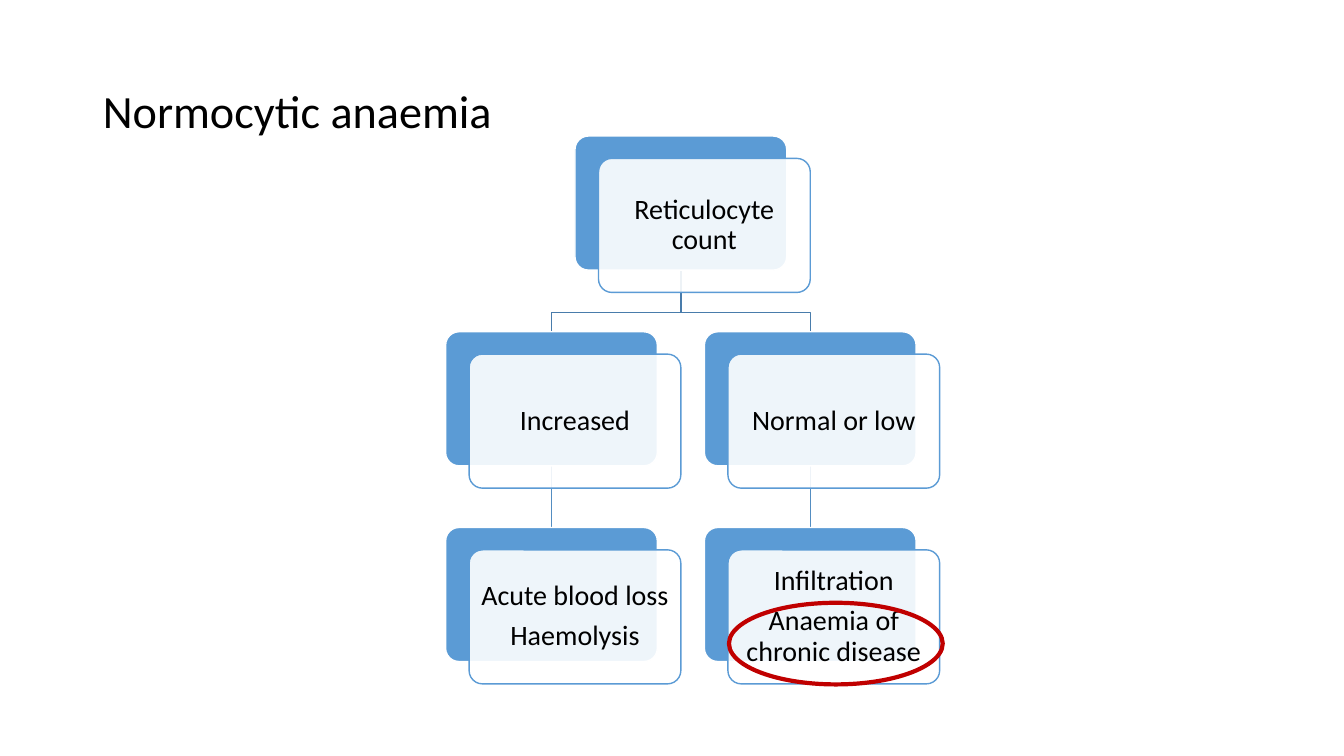
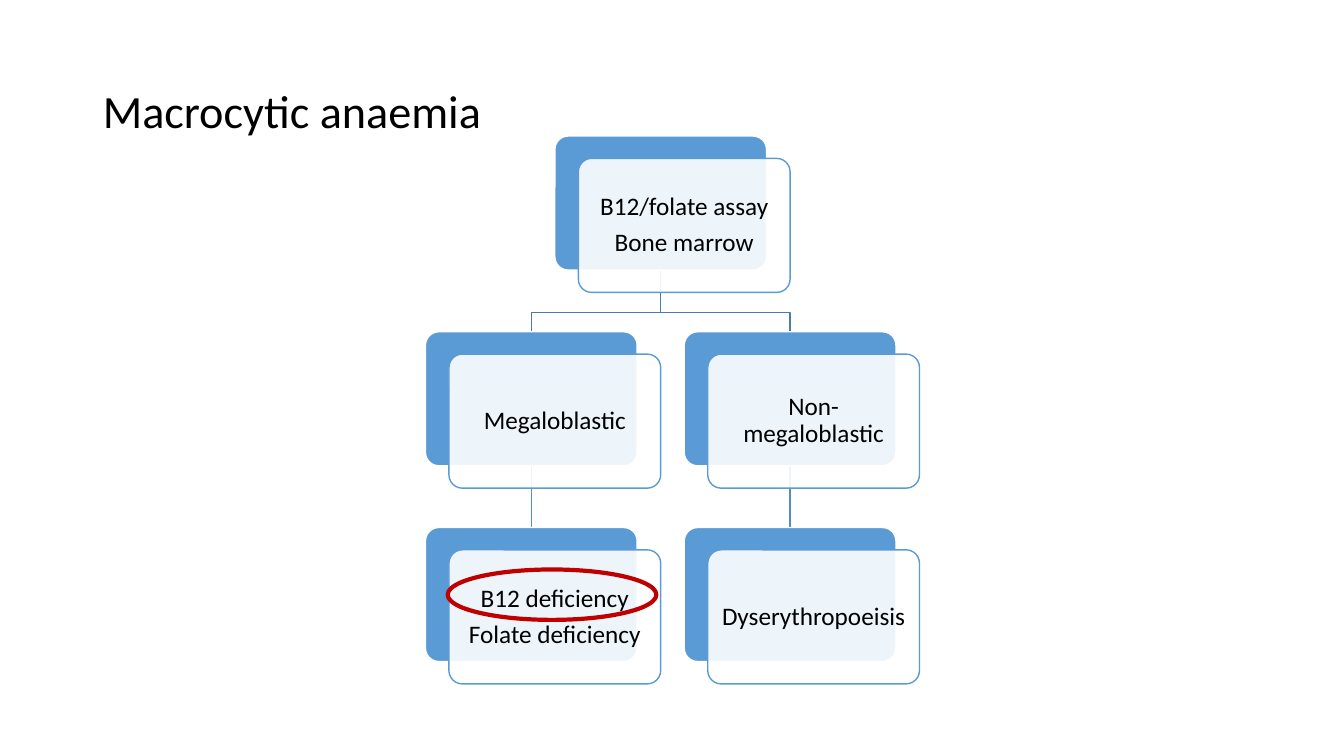
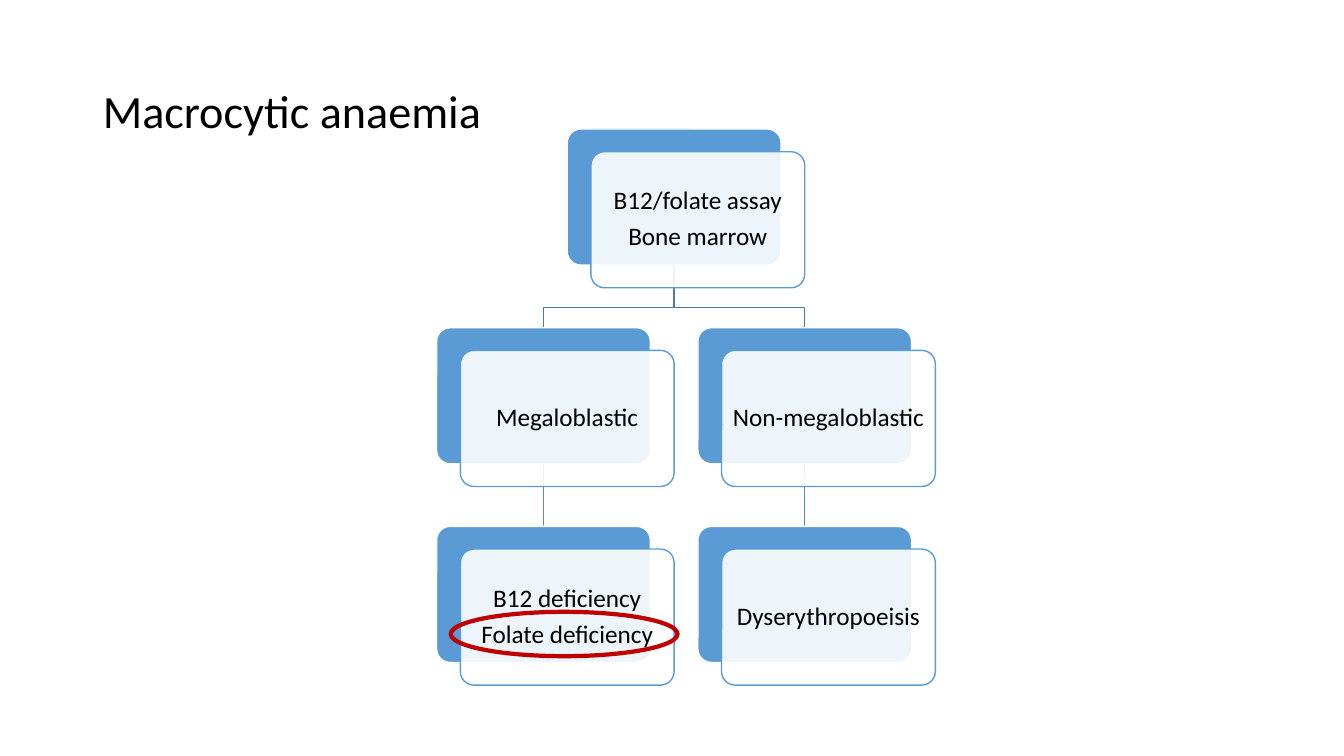
from dataclasses import dataclass

from lxml import etree
from pptx import Presentation
from pptx.dml.color import RGBColor
from pptx.enum.shapes import MSO_CONNECTOR, MSO_SHAPE
from pptx.enum.text import MSO_ANCHOR, MSO_AUTO_SIZE, PP_ALIGN
from pptx.oxml.ns import qn
from pptx.util import Inches, Pt

ROUNDED = MSO_SHAPE.ROUNDED_RECTANGLE
OVAL = MSO_SHAPE.OVAL
STRAIGHT = MSO_CONNECTOR.STRAIGHT
MIDDLE = MSO_ANCHOR.MIDDLE
LEFT, CENTER = PP_ALIGN.LEFT, PP_ALIGN.CENTER
NO_AUTOFIT = MSO_AUTO_SIZE.NONE
TITLE_ONLY = 5
TOP_SIDE, BOTTOM_SIDE = 0, 2


@dataclass(frozen=True)
class Theme:
    font: str = "Calibri"
    text: RGBColor = RGBColor(0x00, 0x00, 0x00)
    white: RGBColor = RGBColor(0xFF, 0xFF, 0xFF)
    blue: RGBColor = RGBColor(0x5B, 0x9B, 0xD5)
    branch: RGBColor = RGBColor(0x49, 0x7C, 0xAB)
    stem: RGBColor = RGBColor(0x53, 0x8D, 0xC1)
    highlight: RGBColor = RGBColor(0xC0, 0x00, 0x00)
    title_size: int = 33
    line_spacing: float = 0.9
    space_after: float = 0.35
    card_opacity: int = 90
    thin: int = 1
    thick: int = 3


@dataclass(frozen=True)
class Tree:
    """Place and proportions of a two-column chart, in inches."""
    left: float
    top: float
    width: float
    height: float
    text_size: int
    inset: float

    def position(self, column, row):
        return (self.left + column * self.width * 11 / 9,
                self.top + row * self.height * 1.46)


class Deck:
    def __init__(self, theme):
        self.theme = theme
        self.presentation = Presentation()
        self.presentation.slide_width = Inches(13.33)
        self.presentation.slide_height = Inches(7.5)
        self.slide = None

    def add_slide(self, title):
        layout = self.presentation.slide_layouts[TITLE_ONLY]
        self.slide = self.presentation.slides.add_slide(layout)
        shape = self.slide.shapes.title
        shape.left, shape.top = Inches(0.92), Inches(0.4)
        shape.width, shape.height = Inches(11.5), Inches(1.45)
        self.set_text(shape, [title], self.theme.title_size, LEFT)

    def set_text(self, shape, lines, size, alignment):
        frame = shape.text_frame
        frame.word_wrap = True
        frame.auto_size = NO_AUTOFIT
        frame.vertical_anchor = MIDDLE
        frame.text = "\n".join(lines)
        for paragraph in frame.paragraphs:
            paragraph.alignment = alignment
            paragraph.line_spacing = self.theme.line_spacing
            paragraph.font.name = self.theme.font
            paragraph.font.size = Pt(size)
            paragraph.font.color.rgb = self.theme.text

    def outline(self, shape, color, width):
        shape.line.color.rgb = color
        shape.line.width = Pt(width)

    def shape(self, kind, left, top, width, height, fill, line, line_width):
        shape = self.slide.shapes.add_shape(
            kind, Inches(left), Inches(top), Inches(width), Inches(height))
        shape.shadow.inherit = False
        if fill is None:
            shape.fill.background()
        else:
            shape.fill.solid()
            shape.fill.fore_color.rgb = fill
        self.outline(shape, line, line_width)
        return shape

    def node(self, tree, column, row, lines):
        """Draw a blue block with an offset text card and return the block."""
        theme = self.theme
        left, top = tree.position(column, row)
        size = tree.width, tree.height
        block = self.shape(ROUNDED, left, top, *size,
                           theme.blue, theme.white, theme.thin)
        card = self.shape(ROUNDED, left + tree.width / 9, top + tree.height / 6,
                          *size, theme.white, theme.blue, theme.thin)
        for shape in (block, card):
            shape.adjustments[0] = 0.1
        color = card.element.spPr.find(qn("a:solidFill"))[0]
        alpha = etree.SubElement(color, qn("a:alpha"))
        alpha.set("val", str(theme.card_opacity * 1000))

        frame = card.text_frame
        frame.margin_left = frame.margin_right = Inches(tree.inset)
        frame.margin_top = frame.margin_bottom = Inches(tree.inset)
        self.set_text(card, lines, tree.text_size, CENTER)
        for paragraph in frame.paragraphs:
            paragraph.space_after = Pt(tree.text_size * theme.space_after)
        return block

    def stem(self, upper, lower):
        connector = self.slide.shapes.add_connector(STRAIGHT, 0, 0, 0, 0)
        connector.begin_connect(upper, BOTTOM_SIDE)
        connector.end_connect(lower, TOP_SIDE)
        self.outline(connector, self.theme.stem, self.theme.thin)
        etree.SubElement(connector.element.spPr, qn("a:effectLst"))
        return connector

    def branch(self, parent, child):
        """Draw a line that leaves the parent downwards and turns to the child."""
        start_x = parent.left + parent.width // 2
        start_y = parent.top + parent.height
        end_x = child.left + child.width // 2
        bend_y = start_y + Inches(0.42)
        builder = self.slide.shapes.build_freeform(start_x, start_y)
        builder.add_line_segments(
            [(start_x, bend_y), (end_x, bend_y), (end_x, child.top)], close=False)
        shape = builder.convert_to_shape()
        shape.shadow.inherit = False
        shape.fill.background()
        self.outline(shape, self.theme.branch, self.theme.thin)
        return shape

    def tree(self, tree, root_lines, columns):
        root = self.node(tree, 0.5, 0, root_lines)
        links = []
        for column, (finding, causes) in enumerate(columns):
            upper = self.node(tree, column, 1, finding)
            lower = self.node(tree, column, 2, causes)
            links += [self.branch(root, upper), self.stem(upper, lower)]
        for link in links:
            root.element.addprevious(link.element)

    def ring(self, left, top, width, height):
        self.shape(OVAL, left, top, width, height,
                   None, self.theme.highlight, self.theme.thick)


NORMOCYTIC = (
    ["Reticulocyte count"],
    [(["Increased"], ["Acute blood loss", "Haemolysis"]),
     (["Normal or low"], ["Infiltration", "Anaemia of chronic disease"])],
)
MACROCYTIC = (
    ["B12/folate assay", "Bone marrow"],
    [(["Megaloblastic"], ["B12 deficiency", "Folate deficiency"]),
     (["Non-megaloblastic"], ["Dyserythropoeisis"])],
)
SLIDES = [
    ("Normocytic anaemia", Tree(4.42, 1.35, 2.1, 1.33, 20, 0.08),
     NORMOCYTIC, (7.23, 5.98, 2.12, 0.81)),
    ("Macrocytic anaemia", Tree(4.22, 1.35, 2.1, 1.33, 18, 0.07),
     MACROCYTIC, (4.44, 5.65, 2.07, 0.5)),
    ("Macrocytic anaemia", Tree(4.33, 1.28, 2.12, 1.35, 18, 0.07),
     MACROCYTIC, (4.47, 6.07, 2.25, 0.44)),
]


def main():
    deck = Deck(Theme())
    for title, tree, (root_lines, columns), ring in SLIDES:
        deck.add_slide(title)
        deck.tree(tree, root_lines, columns)
        deck.ring(*ring)
    deck.presentation.save("out.pptx")


if __name__ == "__main__":
    main()
